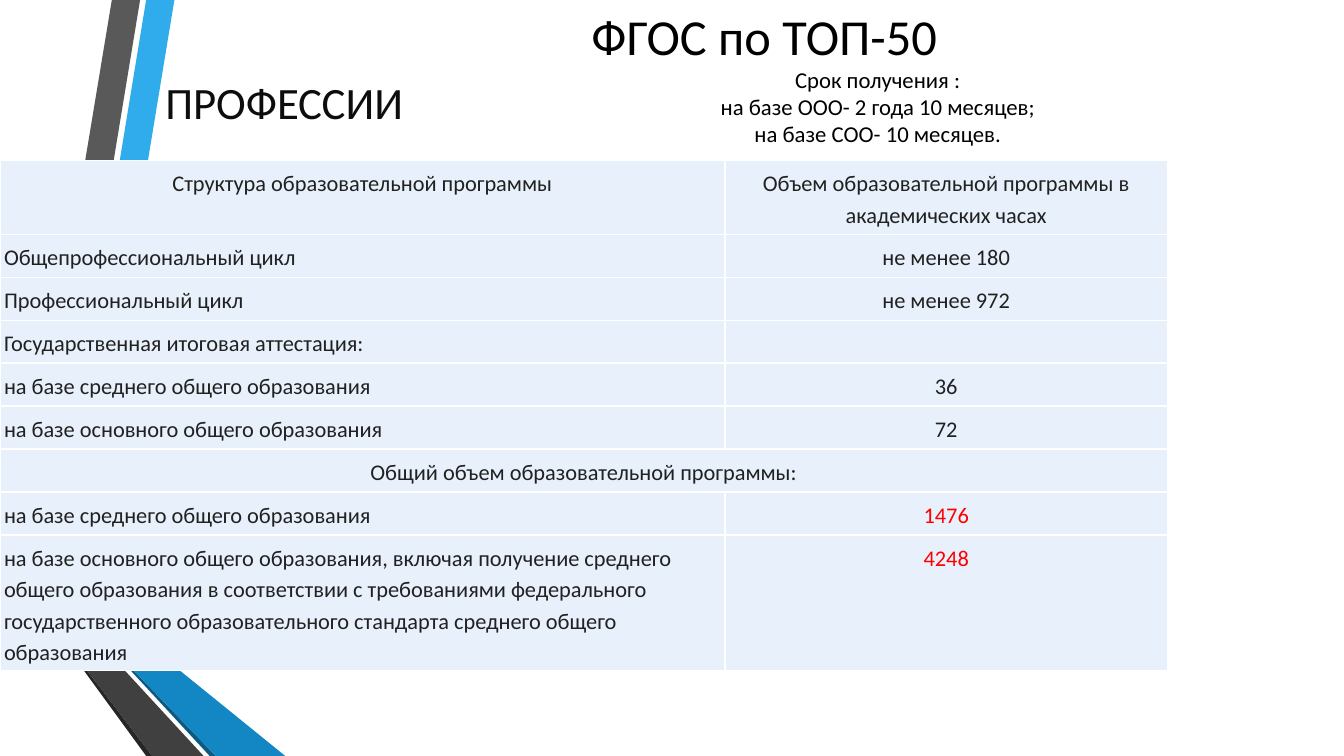
"""Build the slide on the TOP-50 education standards for professions."""
from dataclasses import dataclass

from lxml.etree import SubElement
from pptx import Presentation
from pptx.dml.color import RGBColor
from pptx.enum.text import MSO_ANCHOR, PP_ALIGN
from pptx.oxml.ns import qn
from pptx.slide import Slide
from pptx.table import _Cell
from pptx.text.text import _Paragraph
from pptx.util import Emu, Pt

EMU_PER_PX = 9144
FONT = "Calibri"
WHITE = RGBColor(0xFF, 0xFF, 0xFF)
BLACK = RGBColor(0x00, 0x00, 0x00)
HEADING = RGBColor(0x0D, 0x0D, 0x0D)
CELL_TEXT = RGBColor(0x21, 0x21, 0x21)
CELL_FILL = RGBColor(0xE8, 0xF1, 0xFB)
RED = RGBColor(0xFF, 0x00, 0x00)
LIGHT_BLUE = RGBColor(0x30, 0xAC, 0xEC)
BLUE = RGBColor(0x12, 0x87, 0xC3)
DARK_BLUE = RGBColor(0x0C, 0x5A, 0x82)
LIGHT_GRAY = RGBColor(0x59, 0x59, 0x59)
GRAY = RGBColor(0x40, 0x40, 0x40)
DARK_GRAY = RGBColor(0x26, 0x26, 0x26)


@dataclass(frozen=True)
class Ribbon:
    """A filled outline, with corners in px."""
    color: RGBColor
    corners: tuple[tuple[int, int], ...]


@dataclass(frozen=True)
class Span:
    """Lines of text that share one style."""
    lines: tuple[str, ...]
    size: float
    color: RGBColor


@dataclass(frozen=True)
class TextBlock:
    """A centred text box, with lengths in px."""
    left: int
    top: int
    width: int
    height: int
    spans: tuple[Span, ...]
    hanging: int = 0
    margin_top: int = 5
    margin_bottom: int = 5
    space_before: float = 0
    space_after: float = 0


@dataclass(frozen=True)
class ProgramRow:
    """One table row; a row with hours of None spans both columns."""
    height: int
    section: str
    hours: str | None
    hours_color: RGBColor = CELL_TEXT
    section_align: PP_ALIGN = PP_ALIGN.LEFT


RIBBONS = (
    Ribbon(LIGHT_BLUE, ((50, 578), (77, 583), (173, 0), (145, 0))),
    Ribbon(LIGHT_GRAY, ((139, 0), (111, 0), (16, 573), (44, 577))),
    Ribbon(DARK_GRAY, ((16, 573), (145, 750), (151, 750))),
    Ribbon(DARK_BLUE, ((50, 579), (208, 750), (214, 750))),
    Ribbon(BLUE, ((50, 579), (214, 750), (283, 750), (77, 583), (50, 578))),
    Ribbon(GRAY, ((202, 750), (48, 583), (43, 577), (16, 573), (151, 750))),
)
TEXT_BLOCKS = (
    TextBlock(183, 14, 1150, 145, (
        Span(("ФГОС по ТОП-50",), 36, BLACK),
        Span(("Срок получения :", "на базе ООО- 2 года 10 месяцев;",
              "на базе СОО- 10 месяцев."), 16.2, BLACK),
    ), hanging=225, margin_top=0, margin_bottom=22),
    TextBlock(0, 71, 564, 59, (Span(("ПРОФЕССИИ",), 32, HEADING),),
              space_before=6.4, space_after=6),
)
COLUMN_WIDTHS = (719, 439)
TABLE_TOP, TABLE_HEIGHT = 159, 511
ROWS = (
    ProgramRow(59, "Структура образовательной программы",
               "Объем образовательной программы в академических часах",
               section_align=PP_ALIGN.CENTER),
    ProgramRow(38, "Общепрофессиональный цикл", "не менее 180"),
    ProgramRow(38, "Профессиональный цикл", "не менее 972"),
    ProgramRow(38, "Государственная итоговая аттестация:", ""),
    ProgramRow(38, "на базе среднего общего образования", "36"),
    ProgramRow(38, "на базе основного общего образования", "72"),
    ProgramRow(38, "Общий объем образовательной программы:", None,
               section_align=PP_ALIGN.CENTER),
    ProgramRow(38, "на базе среднего общего образования", "1476", RED),
    ProgramRow(123, "на базе основного общего образования, включая получение "
               "среднего общего образования в соответствии с требованиями "
               "федерального государственного образовательного стандарта "
               "среднего общего образования", "4248", RED),
)


def px(length: int) -> Emu:
    """Turn px into EMU."""
    return Emu(length * EMU_PER_PX)


def add_span(para: _Paragraph, text: str, size: float, color: RGBColor) -> None:
    """Add one styled run."""
    span = para.add_run()
    span.text = text
    span.font.name = FONT
    span.font.size = Pt(size)
    span.font.color.rgb = color


def draw_ribbon(page: Slide, ribbon: Ribbon) -> None:
    """Draw one ribbon outline."""
    start, *others = ribbon.corners
    builder = page.shapes.build_freeform(*start, scale=EMU_PER_PX)
    builder.add_line_segments(others, close=True)
    shape = builder.convert_to_shape()
    shape.shadow.inherit = False
    shape.fill.solid()
    shape.fill.fore_color.rgb = ribbon.color
    shape.line.fill.background()


def draw_text(page: Slide, block: TextBlock) -> None:
    """Draw one text box with a single paragraph."""
    box = page.shapes.add_textbox(px(block.left), px(block.top),
                                  px(block.width), px(block.height))
    frame = box.text_frame
    frame.word_wrap = True
    frame.vertical_anchor = MSO_ANCHOR.MIDDLE
    frame.margin_top = px(block.margin_top)
    frame.margin_bottom = px(block.margin_bottom)
    para = frame.paragraphs[0]
    para.alignment = PP_ALIGN.CENTER
    para.space_before = Pt(block.space_before)
    para.space_after = Pt(block.space_after)
    if block.hanging:
        properties = para._p.get_or_add_pPr()
        properties.set("marL", str(px(block.hanging)))
        properties.set("indent", str(px(-block.hanging)))
    lines = [(line, span) for span in block.spans for line in span.lines]
    for index, (line, span) in enumerate(lines):
        if index:
            para.add_line_break()
        add_span(para, line, span.size, span.color)


def style_cell(cell: _Cell) -> None:
    """Set the borders, fill and margins of a cell."""
    properties = cell._tc.get_or_add_tcPr()
    for side in ("a:lnL", "a:lnR", "a:lnT", "a:lnB"):
        border = SubElement(properties, qn(side), w=str(Pt(1)))
        fill = SubElement(border, qn("a:solidFill"))
        SubElement(fill, qn("a:srgbClr"), val=str(WHITE))
    cell.fill.solid()
    cell.fill.fore_color.rgb = CELL_FILL
    cell.margin_left = cell.margin_right = px(4)
    cell.margin_top = cell.margin_bottom = px(6)


def write_cell(cell: _Cell, text: str, align: PP_ALIGN, color: RGBColor) -> None:
    """Write the text of a cell."""
    para = cell.text_frame.paragraphs[0]
    para.alignment = align
    para.line_spacing = 1.15
    if text:
        add_span(para, text, 16, color)


def draw_table(page: Slide) -> None:
    """Draw the table of programme sections and hours."""
    frame = page.shapes.add_table(len(ROWS), len(COLUMN_WIDTHS), px(0), px(TABLE_TOP),
                                  px(sum(COLUMN_WIDTHS)), px(TABLE_HEIGHT))
    table = frame.table
    table.first_row = table.horz_banding = False
    for column, width in zip(table.columns, COLUMN_WIDTHS):
        column.width = px(width)
    for row, program in zip(table.rows, ROWS):
        row.height = px(program.height)
        section, hours = row.cells
        for cell in (section, hours):
            style_cell(cell)
        write_cell(section, program.section, program.section_align, CELL_TEXT)
        if program.hours is None:
            section.merge(hours)
        else:
            write_cell(hours, program.hours, PP_ALIGN.CENTER, program.hours_color)
    frame.height = px(TABLE_HEIGHT)


def main() -> None:
    """Build and save the deck."""
    deck = Presentation()
    deck.slide_width, deck.slide_height = px(1333), px(750)
    page = deck.slides.add_slide(deck.slide_layouts[6])
    for ribbon in RIBBONS:
        draw_ribbon(page, ribbon)
    for block in TEXT_BLOCKS:
        draw_text(page, block)
    draw_table(page)
    deck.save("out.pptx")


if __name__ == "__main__":
    main()
